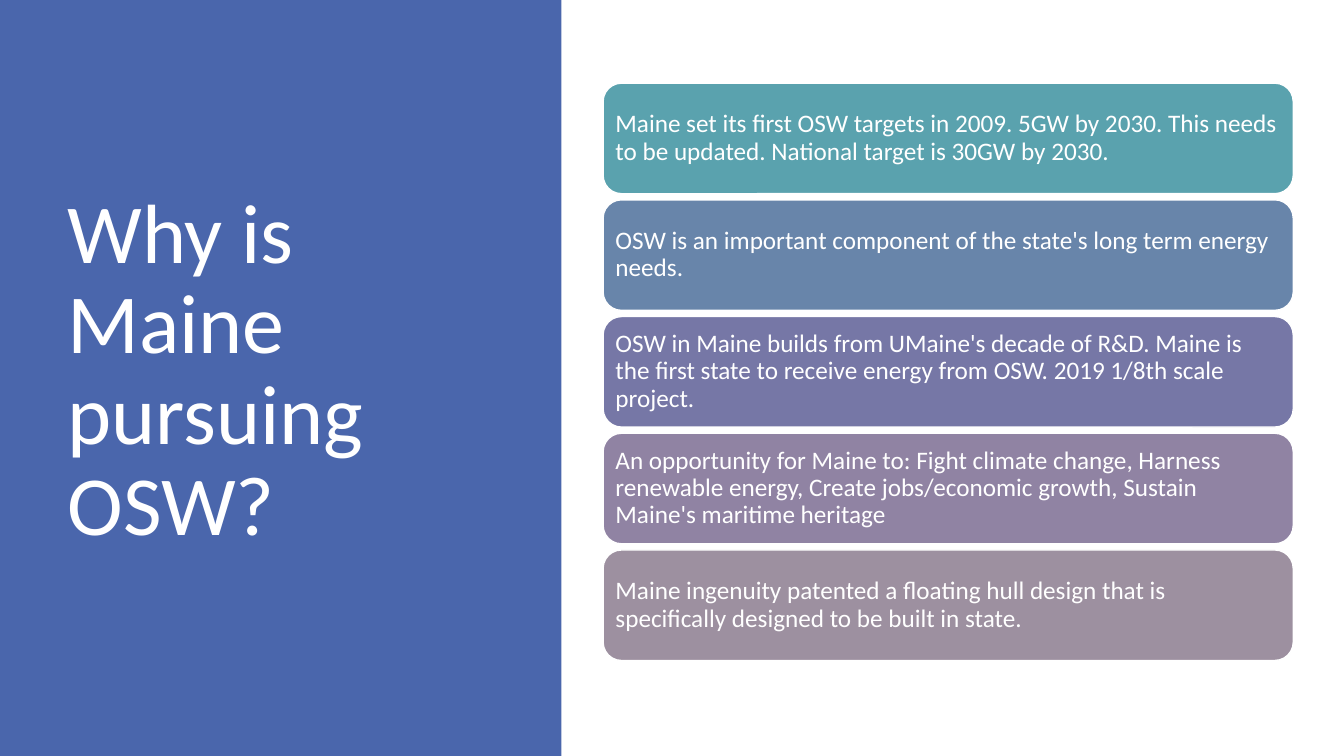
from pptx import Presentation
from pptx.dml.color import RGBColor
from pptx.enum.shapes import MSO_SHAPE
from pptx.enum.text import MSO_ANCHOR, MSO_AUTO_SIZE, PP_ALIGN
from pptx.util import Pt

RECTANGLE = MSO_SHAPE.RECTANGLE
ROUNDED = MSO_SHAPE.ROUNDED_RECTANGLE
MIDDLE = MSO_ANCHOR.MIDDLE
NO_AUTOFIT = MSO_AUTO_SIZE.NONE
LEFT = PP_ALIGN.LEFT
TITLE_ONLY = 5

SLIDE_WIDTH, SLIDE_HEIGHT = 960, 540
FONT = "Calibri"
COLORS = {
    "panel": "4A66AC",
    "white": "FFFFFF",
    "teal": "5AA2AE",
    "steel": "6885AA",
    "indigo": "7677A6",
    "purple": "9083A3",
    "mauve": "9D90A0",
}
REASONS = [
    ("teal", "Maine set its first OSW targets in 2009. 5GW by 2030. This needs "
             "to be updated. National target is 30GW by 2030."),
    ("steel", "OSW is an important component of the state's long term "
              "energy needs."),
    ("indigo", "OSW in Maine builds from UMaine's decade of R&D. Maine is the "
               "first state to receive energy from OSW. 2019 1/8th scale project."),
    ("purple", "An opportunity for Maine to: Fight climate change, Harness "
               "renewable energy, Create jobs/economic growth, Sustain Maine's "
               "maritime heritage"),
    ("mauve", "Maine ingenuity patented a floating hull design that is "
              "specifically designed to be built in state."),
]


def rgb(name):
    return RGBColor.from_string(COLORS[name])


def write(shape, text, size, color="white", inset=None):
    frame = shape.text_frame
    frame.word_wrap = True
    frame.auto_size = NO_AUTOFIT
    frame.vertical_anchor = MIDDLE
    if inset is not None:
        frame.margin_left = frame.margin_right = Pt(inset)
        frame.margin_top = frame.margin_bottom = Pt(inset)
    paragraph = frame.paragraphs[0]
    paragraph.alignment = LEFT
    paragraph.line_spacing = 0.9
    run = paragraph.add_run()
    run.text = text
    run.font.name = FONT
    run.font.size = Pt(size)
    run.font.color.rgb = rgb(color)


def add_block(slide, preset, box, fill, outline=None):
    block = slide.shapes.add_shape(preset, *map(Pt, box))
    block.shadow.inherit = False
    block.fill.solid()
    block.fill.fore_color.rgb = rgb(fill)
    if outline:
        block.line.color.rgb = rgb(outline)
        block.line.width = Pt(1)
    else:
        block.line.fill.background()
    return block


def add_title_panel(slide, box, text):
    left, top, width, height = box
    panel = add_block(slide, RECTANGLE, box, "panel")
    title = slide.shapes.title
    title.element.addprevious(panel.element)  # keeps the panel behind the title
    title.left, title.top = Pt(left + 41), Pt(top + 49)
    title.width, title.height = Pt(width - 101.5), Pt(height - 106.5)
    write(title, text, 60)


def add_reason_cards(slide, box, reasons, gap=5):
    left, top, width, height = box
    card_height = (height - gap * (len(reasons) - 1)) / len(reasons)
    for index, (fill, text) in enumerate(reasons):
        card_top = top + index * (card_height + gap)
        card = add_block(slide, ROUNDED, (left, card_top, width, card_height),
                         fill, outline="white")
        write(card, text, 18, inset=5)


def main():
    deck = Presentation()
    deck.slide_width, deck.slide_height = Pt(SLIDE_WIDTH), Pt(SLIDE_HEIGHT)
    slide = deck.slides.add_slide(deck.slide_layouts[TITLE_ONLY])
    add_title_panel(slide, (0, 0, 401, SLIDE_HEIGHT), "Why is Maine pursuing OSW?")
    add_reason_cards(slide, (430.8, 59.4, 493, 412.4), REASONS, gap=4.4)
    deck.save("out.pptx")


if __name__ == "__main__":
    main()
